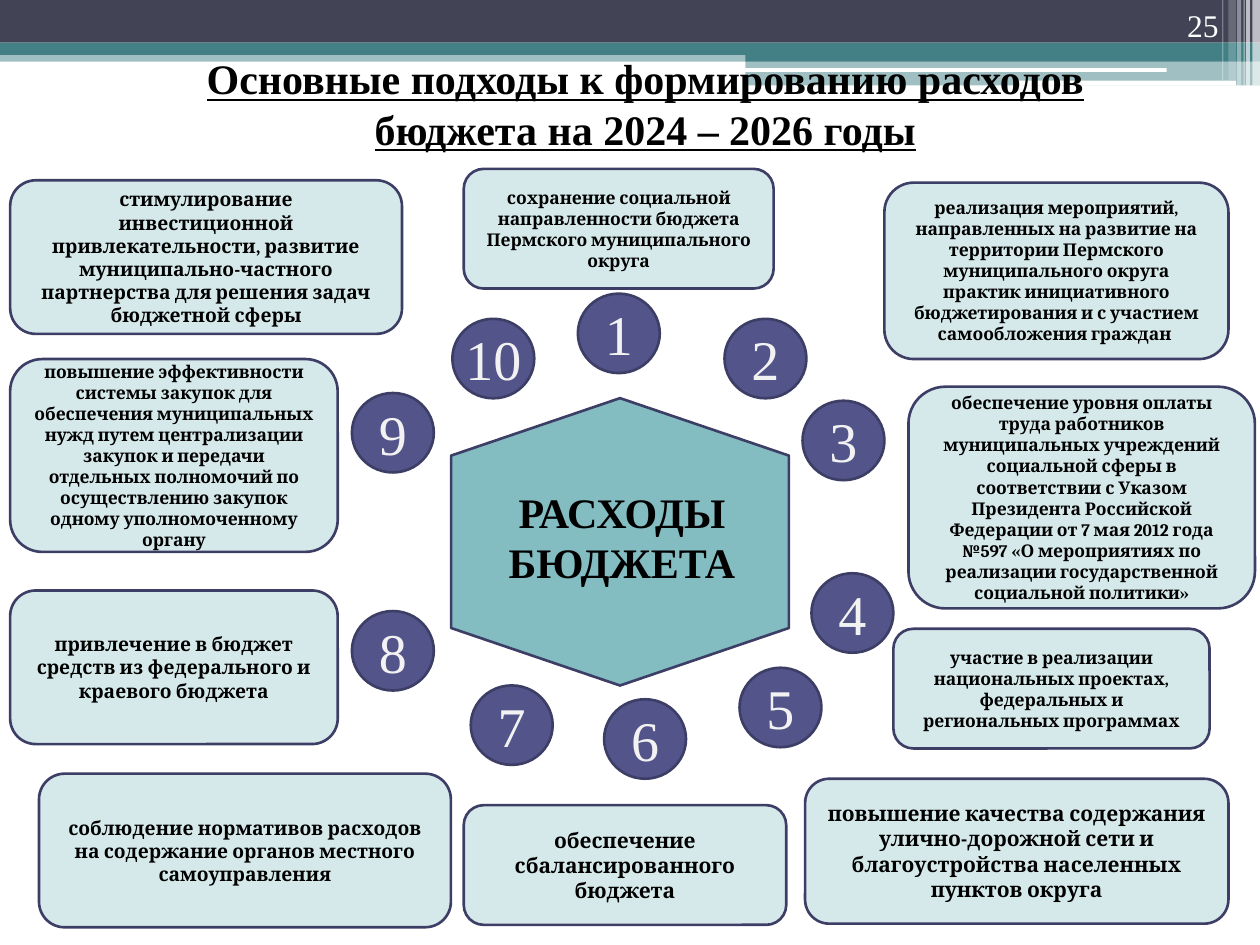
from dataclasses import dataclass

import lxml.etree
import pptx
import pptx.dml.color
import pptx.enum.shapes
import pptx.enum.text
import pptx.oxml.ns
import pptx.util

Pt = pptx.util.Pt
RGBColor = pptx.dml.color.RGBColor
Shape = pptx.enum.shapes.MSO_SHAPE
Align = pptx.enum.text.PP_ALIGN
Anchor = pptx.enum.text.MSO_ANCHOR

WHITE = RGBColor(0xFF, 0xFF, 0xFF)
BLACK = RGBColor(0, 0, 0)
SLATE = RGBColor(0x42, 0x44, 0x56)
TEAL = RGBColor(0x43, 0x80, 0x86)
AQUA = RGBColor(0x83, 0xBC, 0xC1)
PALE = RGBColor(0xD6, 0xE9, 0xEA)
VIOLET = RGBColor(0x53, 0x54, 0x8A)
OUTLINE = RGBColor(0x3D, 0x3E, 0x66)
OFF_WHITE = RGBColor(0xF2, 0xF2, 0xF2)

SERIF = "Times New Roman"
CARD_FONT = "Cambria"
CIRCLE_SIZE = (46.8, 45.4)


@dataclass
class Band:
    box: tuple[float, float, float, float]
    color: RGBColor
    opacity: int = 100
    kind: Shape = Shape.RECTANGLE


@dataclass
class Approach:
    """A budget approach: its card and the top left of its numbered circle."""
    text: str
    size: float
    card: tuple[float, float, float, float]
    circle: tuple[float, float]


BANDS = [
    Band((0, 28.8, 720, 6.5), TEAL, 50),
    Band((0, 0, 720, 24.4), SLATE),
    Band((0, 24.4, 720, 7), TEAL),
    Band((426, 28.1, 294, 7), TEAL),
    Band((426, 34.6, 294, 14.2), TEAL, 50),
    Band((425.5, 38.9, 241.2, 2.2), WHITE, kind=Shape.ROUNDED_RECTANGLE),
    Band((580.3, 46.1, 126, 2.9), WHITE, kind=Shape.ROUNDED_RECTANGLE),
    Band((715.7, 0, 4.3, 49), WHITE, 65),
    Band((712.1, 0, 2.2, 49), WHITE, 65),
    Band((710.6, 0, 0.7, 49), WHITE, 60),
    Band((707, 0, 2.2, 49), WHITE, 40),
    Band((702, 0, 4.3, 46), WHITE, 20),
    Band((698.4, 0, 0.7, 46), WHITE, 30),
]

APPROACHES = [
    Approach("сохранение социальной направленности бюджета Пермского "
             "муниципального округа",
             10, (265, 96.5, 177.1, 68.4), (330.2, 167.8)),
    Approach("реализация мероприятий, направленных на развитие на территории "
             "Пермского муниципального округа практик инициативного "
             "бюджетирования и с участием самообложения граждан ",
             10, (505.4, 104.4, 196.6, 100.8), (414, 182.2)),
    Approach("обеспечение уровня оплаты труда работников муниципальных "
             "учреждений социальной сферы в соответствии с Указом Президента "
             "Российской Федерации от 7 мая 2012 года №597 «О мероприятиях по "
             "реализации государственной социальной политики»",
             10, (519.1, 221, 198, 126.7), (458.6, 229)),
    Approach("участие в реализации национальных проектах, федеральных и "
             "региональных программах",
             10, (510.5, 359.3, 180.7, 68.4), (463.7, 327.6)),
    Approach("повышение качества содержания улично-дорожной сети и "
             "благоустройства населенных пунктов округа",
             12, (460.1, 445, 241.9, 82.8), (422.6, 381.6)),
    Approach("обеспечение сбалансированного бюджета",
             12, (265, 460.1, 184.3, 68.4), (345.2, 399.6)),
    Approach("соблюдение нормативов расходов на содержание органов местного "
             "самоуправления",
             11, (22.3, 442.1, 235.4, 87.8), (269, 391.7)),
    Approach("привлечение в бюджет средств из федерального и краевого бюджета",
             11, (5.8, 337.4, 187.2, 87.8), (201.1, 349.2)),
    Approach("повышение эффективности системы закупок для обеспечения "
             "муниципальных нужд путем централизации закупок и передачи "
             "отдельных полномочий по осуществлению закупок одному "
             "уполномоченному органу",
             10, (5.8, 205.2, 187.2, 110.2), (201.1, 224.6)),
    Approach("стимулирование инвестиционной привлекательности, развитие "
             "муниципально-частного партнерства для решения задач бюджетной "
             "сферы",
             11, (5.8, 103, 223.9, 87.8), (258.5, 182.2)),
]


def write_text(shape, text: str, *, size: float, font: str = SERIF,
               color: RGBColor = BLACK, bold: bool = False,
               underline: bool = False, align: Align = Align.CENTER,
               anchor: Anchor = Anchor.MIDDLE, wrap: bool = True) -> None:
    frame = shape.text_frame
    frame.word_wrap = wrap
    frame.vertical_anchor = anchor
    paragraph = frame.paragraphs[0]
    paragraph.text = text
    paragraph.alignment = align
    for run in paragraph.runs:
        run.font.name = font
        run.font.size = Pt(size)
        run.font.bold = bold
        run.font.underline = underline
        run.font.color.rgb = color


def add_filled(slide, kind: Shape, box: tuple, fill: RGBColor,
               outlined: bool = True):
    shape = slide.shapes.add_shape(kind, *map(Pt, box))
    shape.shadow.inherit = False
    shape.fill.solid()
    shape.fill.fore_color.rgb = fill
    if outlined:
        shape.line.color.rgb = OUTLINE
        shape.line.width = Pt(1.5)
    else:
        shape.line.fill.background()
    return shape


def draw_band(slide, band: Band) -> None:
    shape = add_filled(slide, band.kind, band.box, band.color, outlined=False)
    if band.opacity < 100:
        color = shape.fill._xPr.find(".//" + pptx.oxml.ns.qn("a:srgbClr"))
        alpha = lxml.etree.SubElement(color, pptx.oxml.ns.qn("a:alpha"))
        alpha.set("val", str(band.opacity * 1000))


def draw_approach(slide, number: int, approach: Approach) -> None:
    card = add_filled(slide, Shape.ROUNDED_RECTANGLE, approach.card, PALE)
    write_text(card, approach.text, size=approach.size, font=CARD_FONT, bold=True)
    circle = add_filled(slide, Shape.OVAL, approach.circle + CIRCLE_SIZE, VIOLET)
    write_text(circle, str(number), size=32, color=OFF_WHITE, wrap=False)


def place_title(slide, text: str) -> None:
    """Format the title and bring it in front of the header bands."""
    title = slide.shapes.title
    title.left, title.top, title.width, title.height = map(
        Pt, (86.4, 14.4, 564.5, 89.3))
    write_text(title, text, size=24, bold=True, underline=True)
    slide.shapes._spTree.append(title._element)


def main() -> None:
    deck = pptx.Presentation()
    deck.slide_width, deck.slide_height = Pt(720), Pt(540)
    slide = deck.slides.add_slide(deck.slide_layouts[5])

    for band in BANDS:
        draw_band(slide, band)
    place_title(slide, "Основные подходы к формированию расходов бюджета "
                       "на 2024 – 2026 годы")
    page_number = slide.shapes.add_textbox(*map(Pt, (643.7, 0, 59.8, 28.8)))
    write_text(page_number, "25", size=18, color=WHITE, align=Align.RIGHT,
               anchor=Anchor.BOTTOM)

    hexagon = add_filled(slide, Shape.FLOWCHART_PREPARATION,
                         (272.2, 213.1, 164.2, 193), AQUA)
    hexagon.rotation = 90
    center = slide.shapes.add_textbox(*map(Pt, (283, 274.3, 144.7, 65.5)))
    write_text(center, "РАСХОДЫ\nБЮДЖЕТА", size=24, bold=True,
               anchor=Anchor.TOP)

    for number, approach in enumerate(APPROACHES, start=1):
        draw_approach(slide, number, approach)
    deck.save("out.pptx")


if __name__ == "__main__":
    main()
